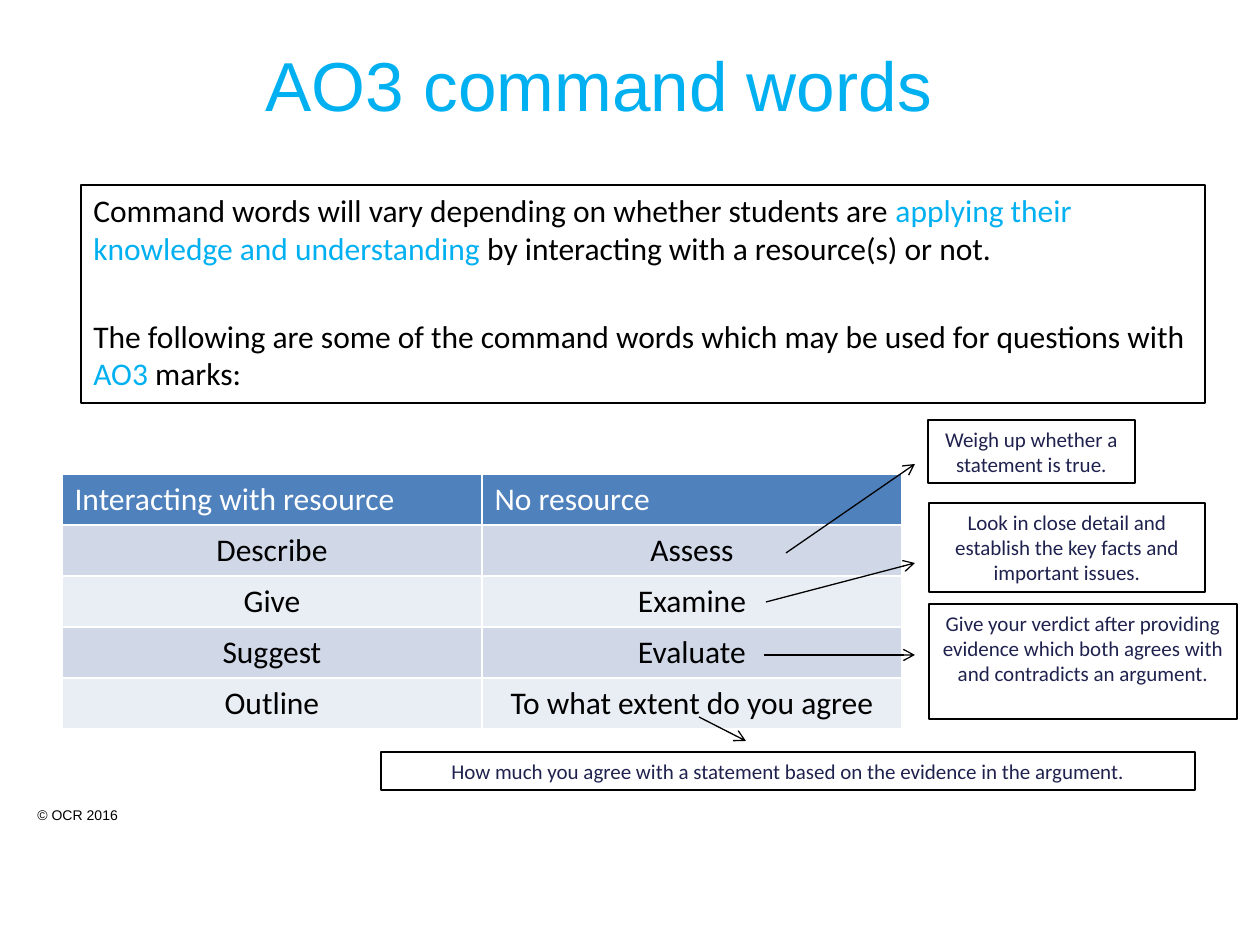
from dataclasses import dataclass

from lxml import etree
from pptx import Presentation
from pptx import util as u
from pptx.dml import color
from pptx.enum import shapes, text
from pptx.oxml import ns

SCALE = 914400 / 126
BLACK, WHITE, CYAN, NAVY = "000000", "FFFFFF", "00B0F0", "1F224E"
HEAD, BANDS = "4F81BD", ("D0D8E8", "E9EDF4")
LEFT, MID = text.PP_ALIGN.LEFT, text.PP_ALIGN.CENTER


@dataclass
class Box:
    x: int
    y: int
    w: int
    h: int


@dataclass
class Note:
    box: Box
    words: str
    fill: str | None = None


@dataclass
class Arrow:
    x1: int
    y1: int
    x2: int
    y2: int


NOTES = [
    Note(Box(928, 420, 207, 63), "Weigh up whether a statement is true."),
    Note(Box(929, 503, 276, 89),
         "Look in close detail and establish the key facts and important issues."),
    Note(Box(929, 604, 308, 115),
         "Give your verdict after providing evidence which both agrees "
         "with and contradicts an argument."),
    Note(Box(381, 752, 814, 38),
         "How much you agree with a statement based on the evidence in the argument.",
         WHITE),
]
ARROWS = [
    Arrow(786, 553, 915, 464),
    Arrow(766, 602, 915, 563),
    Arrow(764, 655, 915, 655),
    Arrow(699, 717, 746, 741),
]
ROWS = [
    ("Interacting with resource", "No resource"),
    ("Describe", "Assess"),
    ("Give", "Examine"),
    ("Suggest", "Evaluate"),
    ("Outline", "To what extent do you agree"),
]
INTRO = [
    [("Command words will vary depending on whether students are ", BLACK),
     ("applying their knowledge and understanding", CYAN),
     (" by interacting with a resource(s) or not.", BLACK)],
    [("The following are some of the command words which may be used "
      "for questions with ", BLACK),
     ("AO3 ", CYAN),
     ("marks:", BLACK)],
]


def px(n: int) -> int:
    return round(n * SCALE)


def place(box: Box) -> list[int]:
    return [px(n) for n in (box.x, box.y, box.w, box.h)]


def rgb(code: str) -> color.RGBColor:
    return color.RGBColor.from_string(code)


def write(frame, words, *, size=12, font="Calibri", tint=BLACK, align=LEFT,
          gap=0, anchor=text.MSO_ANCHOR.TOP) -> None:
    frame.word_wrap = True
    frame.vertical_anchor = anchor
    paras = [[(words, tint)]] if isinstance(words, str) else words
    for i, runs in enumerate(paras):
        para = frame.add_paragraph() if i else frame.paragraphs[0]
        para.alignment = align
        if i:
            para.space_before = u.Pt(gap)
        for part, hue in runs:
            run = para.add_run()
            run.text = part
            run.font.size = u.Pt(size)
            run.font.name = font
            run.font.bold = False
            run.font.color.rgb = rgb(hue)


def label(slide, box: Box, words: str, **style) -> None:
    write(slide.shapes.add_textbox(*place(box)).text_frame, words, **style)


def panel(slide, box: Box, words, fill: str | None = None, **style) -> None:
    shape = slide.shapes.add_shape(shapes.MSO_SHAPE.RECTANGLE, *place(box))
    shape.shadow.inherit = False
    if fill:
        shape.fill.solid()
        shape.fill.fore_color.rgb = rgb(fill)
    else:
        shape.fill.background()
    shape.line.color.rgb = rgb(BLACK)
    shape.line.width = u.Pt(0.75)
    write(shape.text_frame, words, **style)


def grid(slide, box: Box) -> None:
    table = slide.shapes.add_table(len(ROWS), len(ROWS[0]), *place(box)).table
    for r, row in enumerate(ROWS):
        for c, words in enumerate(row):
            cell = table.cell(r, c)
            cell.fill.solid()
            cell.fill.fore_color.rgb = rgb(BANDS[(r - 1) % 2] if r else HEAD)
            write(cell.text_frame, words, size=18, tint=BLACK if r else WHITE,
                  align=MID if r else LEFT)


def point(slide, arrow: Arrow) -> None:
    line = slide.shapes.add_connector(
        shapes.MSO_CONNECTOR.STRAIGHT,
        px(arrow.x1), px(arrow.y1), px(arrow.x2), px(arrow.y2))
    line.line.color.rgb = rgb(BLACK)
    line.line.width = u.Pt(0.75)
    etree.SubElement(line.line._get_or_add_ln(), ns.qn("a:tailEnd"), type="arrow")
    etree.SubElement(line._element.spPr, ns.qn("a:effectLst"))


def main() -> None:
    deck = Presentation()
    deck.slide_width, deck.slide_height = px(1260), px(945)
    slide = deck.slides.add_slide(deck.slide_layouts[6])
    label(slide, Box(25, 800, 238, 30), "© OCR 2016", size=8, font="Arial")
    label(slide, Box(0, 37, 1198, 94), "AO3 command words", size=39.6, font="Arial",
          tint=CYAN, align=MID, anchor=text.MSO_ANCHOR.MIDDLE)
    panel(slide, Box(81, 185, 1124, 218), INTRO, size=18, gap=28.5)
    grid(slide, Box(62, 474, 840, 255))
    for note in NOTES:
        panel(slide, note.box, note.words, note.fill, tint=NAVY, align=MID)
    for arrow in ARROWS:
        point(slide, arrow)
    deck.save("out.pptx")


if __name__ == "__main__":
    main()
